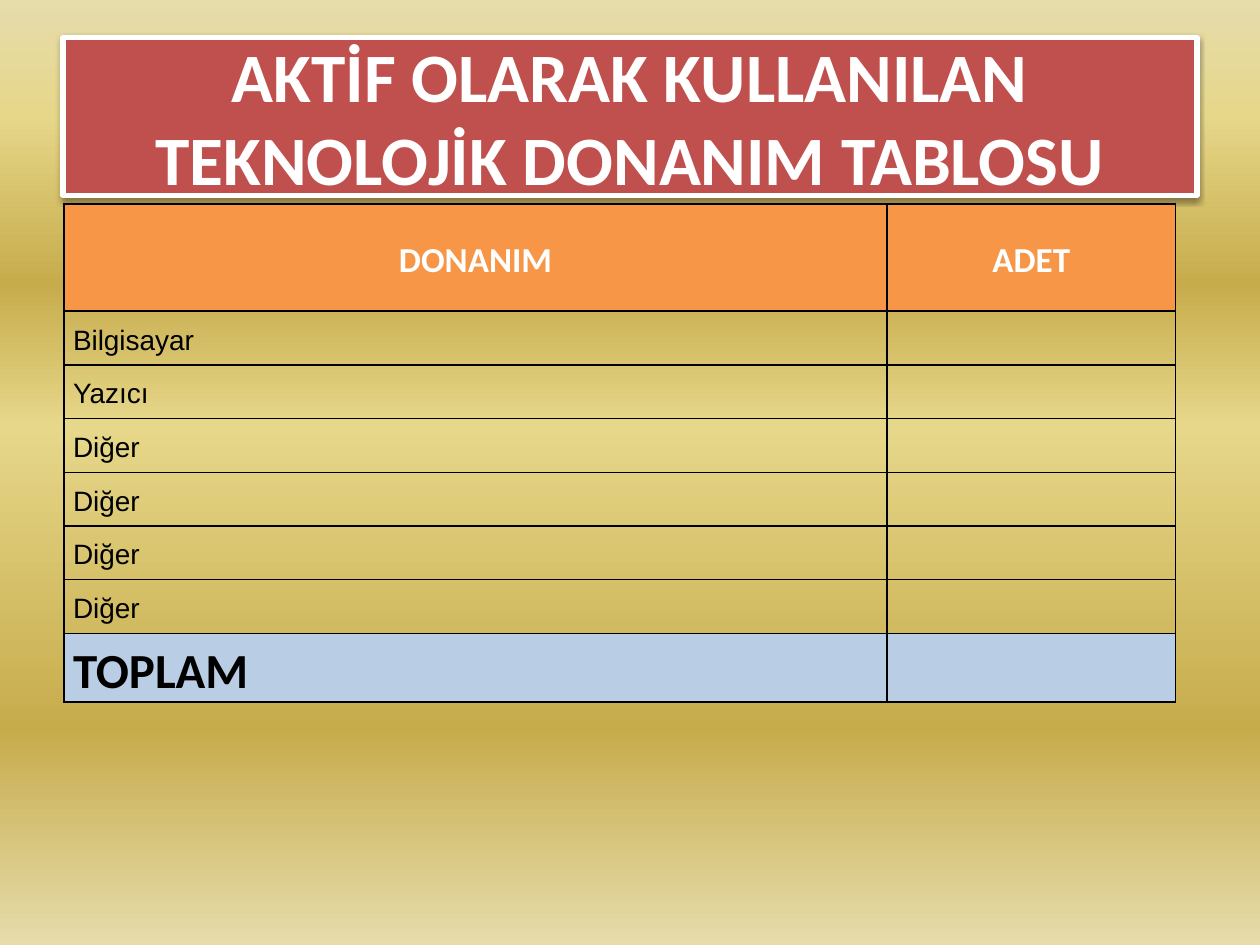
from dataclasses import dataclass

from lxml import etree
from pptx import Presentation
from pptx.dml.color import RGBColor
from pptx.enum.shapes import MSO_SHAPE
from pptx.enum.text import MSO_ANCHOR, PP_ALIGN
from pptx.oxml.ns import qn
from pptx.util import Inches, Pt

RECTANGLE = MSO_SHAPE.RECTANGLE
MIDDLE = MSO_ANCHOR.MIDDLE
CENTER, LEFT = PP_ALIGN.CENTER, PP_ALIGN.LEFT
DOWNWARD = "5400000"


@dataclass(frozen=True)
class TextStyle:
    font: str
    size: float
    color: str
    bold: bool
    align: PP_ALIGN


class Theme:
    white, black = "FFFFFF", "000000"
    title_fill, header_fill, total_fill = "C0504D", "F79646", "B9CDE5"
    background = [(0, "E6DCAC"), (12, "E6D78A"), (30, "C7AC4C"),
                  (45, "E6D78A"), (77, "C7AC4C"), (100, "E6DCAC")]
    title = TextStyle("Calibri", 39.6, white, True, CENTER)
    header = TextStyle("Calibri", 20, white, True, CENTER)
    body = TextStyle("Arial", 16, black, False, LEFT)
    total = TextStyle("Calibri", 28, black, True, LEFT)


def add_xml(parent, tag, **attributes):
    return etree.SubElement(parent, qn(tag), attributes)


class SlideBuilder:
    def __init__(self, presentation, theme):
        self.theme = theme
        self.slide = presentation.slides.add_slide(presentation.slide_layouts[6])

    def background(self):
        self.slide.background.fill.gradient()
        background = self.slide.element.find(".//" + qn("p:bg"))
        stops = background.find(".//" + qn("a:gsLst"))
        for stop in list(stops):
            stops.remove(stop)
        for percent, color in self.theme.background:
            stop = add_xml(stops, "a:gs", pos=str(percent * 1000))
            add_xml(stop, "a:srgbClr", val=color)
        background.find(".//" + qn("a:lin")).set("ang", DOWNWARD)

    def text(self, frame, text, style, line_spacing=None):
        paragraph = frame.paragraphs[0]
        paragraph.alignment = style.align
        paragraph.line_spacing = line_spacing
        run = paragraph.add_run()
        run.text = text
        run.font.name = style.font
        run.font.size = Pt(style.size)
        run.font.bold = style.bold
        run.font.color.rgb = RGBColor.from_string(style.color)

    def title(self, text, left, top, width, height):
        shape = self.slide.shapes.add_shape(
            RECTANGLE, Inches(left), Inches(top), Inches(width), Inches(height))
        shape.fill.solid()
        shape.fill.fore_color.rgb = RGBColor.from_string(self.theme.title_fill)
        shape.line.color.rgb = RGBColor.from_string(self.theme.white)
        shape.line.width = Pt(3)
        self.shadow(shape)
        shape.text_frame.word_wrap = True
        shape.text_frame.vertical_anchor = MIDDLE
        self.text(shape.text_frame, text, self.theme.title)

    def shadow(self, shape):
        shape.shadow.inherit = False
        effects = shape.element.spPr.find(qn("a:effectLst"))
        shadow = add_xml(effects, "a:outerShdw", blurRad=str(Pt(3.1)),
                         dist=str(Pt(1.6)), dir=DOWNWARD, rotWithShape="0")
        color = add_xml(shadow, "a:srgbClr", val=self.theme.black)
        add_xml(color, "a:alpha", val="38000")

    def cell(self, cell, text, style, fill):
        cell.vertical_anchor = MIDDLE
        cell.margin_left = cell.margin_right = Inches(0.07)
        cell.margin_top = cell.margin_bottom = 0
        properties = cell._tc.get_or_add_tcPr()
        for side in ("a:lnL", "a:lnR", "a:lnT", "a:lnB"):
            line = add_xml(properties, side, w=str(Pt(1)))
            add_xml(add_xml(line, "a:solidFill"), "a:srgbClr", val=self.theme.black)
        if fill:
            cell.fill.solid()
            cell.fill.fore_color.rgb = RGBColor.from_string(fill)
        else:
            cell.fill.background()
        if text:
            self.text(cell.text_frame, text, style, line_spacing=1.15)

    def table(self, rows, left, top, column_widths):
        """Each row is (texts, text style, fill, height)."""
        heights = [height for *_, height in rows]
        table = self.slide.shapes.add_table(
            len(rows), len(column_widths), Inches(left), Inches(top),
            Inches(sum(column_widths)), Inches(sum(heights))).table
        table.first_row = table.horz_banding = False
        for column, width in zip(table.columns, column_widths):
            column.width = Inches(width)
        for row, (texts, style, fill, height) in zip(table.rows, rows):
            row.height = Inches(height)
            for cell, text in zip(row.cells, texts):
                self.cell(cell, text, style, fill)


def main():
    presentation = Presentation()
    presentation.slide_width, presentation.slide_height = Inches(10), Inches(7.5)
    theme = Theme()
    builder = SlideBuilder(presentation, theme)
    builder.background()
    builder.title("AKTİF OLARAK KULLANILAN TEKNOLOJİK DONANIM TABLOSU",
                  0.5, 0.3, 9, 1.25)
    equipment = ["Bilgisayar", "Yazıcı"] + ["Diğer"] * 4
    rows = [
        (("DONANIM", "ADET"), theme.header, theme.header_fill, 0.85),
        *(((name, ""), theme.body, None, 0.426) for name in equipment),
        (("TOPLAM", ""), theme.total, theme.total_fill, 0.54),
    ]
    builder.table(rows, 0.51, 1.62, [6.53, 2.29])
    presentation.save("out.pptx")


if __name__ == "__main__":
    main()
